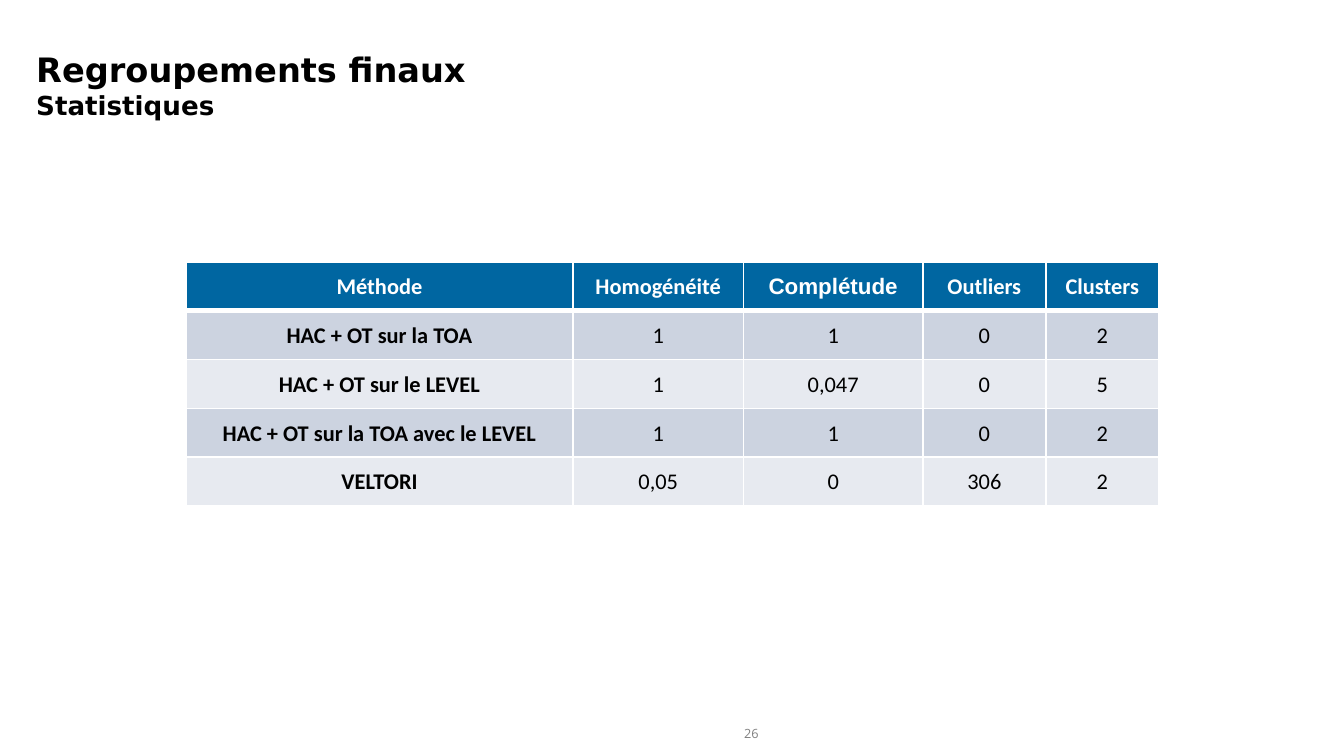
import pptx
import pptx.util
import pptx.dml.color
import pptx.enum.text
import pptx.oxml
import pptx.oxml.ns

Pt = pptx.util.Pt
PP_ALIGN = pptx.enum.text.PP_ALIGN
MSO_ANCHOR = pptx.enum.text.MSO_ANCHOR

TITLE = [("Regroupements finaux", 18), ("Statistiques", 14)]
PAGE = "26"
HEADER = ["Méthode", "Homogénéité", "Complétude", "Outliers", "Clusters"]
ROWS = [
    ["HAC + OT sur la TOA", "1", "1", "0", "2"],
    ["HAC + OT sur le LEVEL", "1", "0,047", "0", "5"],
    ["HAC + OT sur la TOA avec le LEVEL", "1", "1", "0", "2"],
    ["VELTORI", "0,05", "0", "306", "2"],
]
COL_WIDTHS = [207.4, 91.3, 96.2, 65.8, 60.6]
ROW_HEIGHT = 26.15
HEADER_FILL = "0066A1"
BANDS = ["CCD3E0", "E7EAF0"]
WHITE, BLACK, GREY = "FFFFFF", "000000", "818181"


def rgb(value):
    return pptx.dml.color.RGBColor.from_string(value)


def add_run(p, text, size, font, color, bold=False):
    r = p.add_run()
    r.text = text
    r.font.size = Pt(size)
    r.font.name = font
    r.font.bold = bold
    r.font.color.rgb = rgb(color)


def set_margins(target, left, top, right, bottom):
    target.margin_left, target.margin_top = Pt(left), Pt(top)
    target.margin_right, target.margin_bottom = Pt(right), Pt(bottom)


def set_borders(cell, widths):
    tc_pr = cell._tc.get_or_add_tcPr()
    for i, (side, width) in enumerate(widths.items()):
        tc_pr.insert(i, pptx.oxml.parse_xml(
            f'<a:ln{side} {pptx.oxml.ns.nsdecls("a")} w="{Pt(width)}">'
            f'<a:solidFill><a:srgbClr val="{WHITE}"/></a:solidFill></a:ln{side}>'))


def add_title(s):
    sp = s.shapes.title
    sp.left, sp.top, sp.width, sp.height = Pt(12.2), Pt(22.5), Pt(455.8), Pt(44.6)
    tf = sp.text_frame
    tf.word_wrap = True
    tf.auto_size = pptx.enum.text.MSO_AUTO_SIZE.NONE
    tf.vertical_anchor = MSO_ANCHOR.TOP
    set_margins(tf, 7.2, 3.6, 7.2, 3.6)
    p = tf.paragraphs[0]
    p.alignment = PP_ALIGN.LEFT
    for i, (text, size) in enumerate(TITLE):
        if i:
            p.add_line_break()
        add_run(p, text, size, "DejaVu Sans", BLACK, True)


def add_results(s):
    data = [HEADER] + ROWS
    table = s.shapes.add_table(
        len(data), len(HEADER), Pt(99.6), Pt(140.4),
        Pt(sum(COL_WIDTHS)), Pt(ROW_HEIGHT * len(data))).table
    for col, width in zip(table.columns, COL_WIDTHS):
        col.width = Pt(width)
    for i, values in enumerate(data):
        table.rows[i].height = Pt(ROW_HEIGHT)
        for j, text in enumerate(values):
            cell = table.cell(i, j)
            cell.fill.solid()
            cell.fill.fore_color.rgb = rgb(BANDS[(i - 1) % 2] if i else HEADER_FILL)
            set_borders(cell, {"L": 1, "R": 1, "T": 3 if i == 1 else 1, "B": 1 if i else 3})
            set_margins(cell, 0.7, 0.7, 0.7, 0)
            cell.vertical_anchor = MSO_ANCHOR.MIDDLE
            p = cell.text_frame.paragraphs[0]
            p.alignment = PP_ALIGN.CENTER
            font = "Arial" if text == "Complétude" else "Calibri"
            add_run(p, text, 12, font, BLACK if i else WHITE, i == 0 or j == 0)


def add_page_number(s):
    sp = s.shapes.add_textbox(Pt(378), Pt(386), Pt(49), Pt(14.4))
    tf = sp.text_frame
    tf.word_wrap = True
    tf.vertical_anchor = MSO_ANCHOR.MIDDLE
    set_margins(tf, 5.8, 2.9, 5.8, 2.9)
    p = tf.paragraphs[0]
    p.alignment = PP_ALIGN.CENTER
    add_run(p, PAGE, 6.8, "Open Sans", GREY)


def main():
    prs = pptx.Presentation()
    prs.slide_width, prs.slide_height = Pt(720), Pt(405)
    s = prs.slides.add_slide(prs.slide_layouts[5])
    add_title(s)
    add_results(s)
    add_page_number(s)
    prs.save("out.pptx")


if __name__ == "__main__":
    main()
